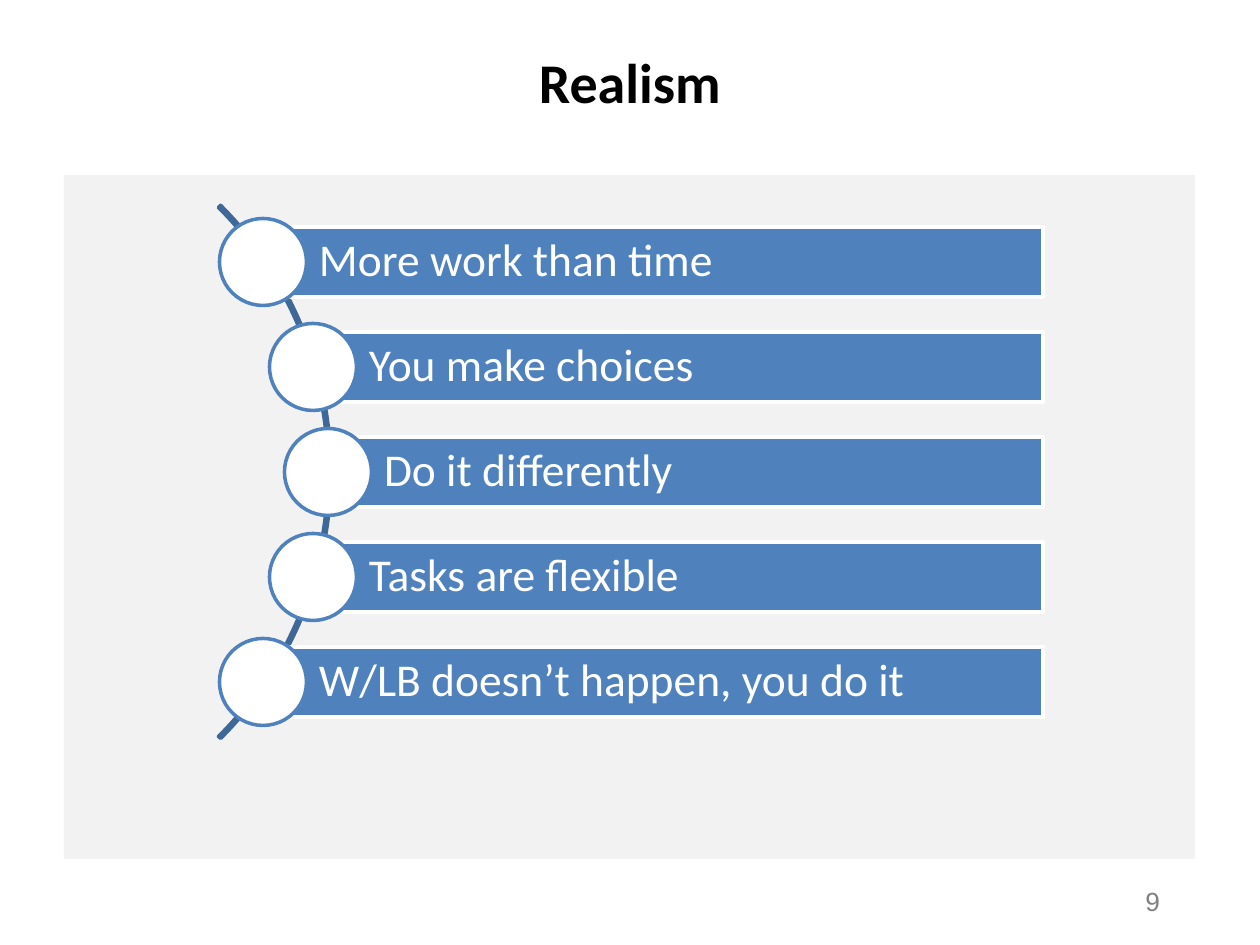
import math
from dataclasses import dataclass

from pptx import Presentation
from pptx import util as u
from pptx.dml.color import RGBColor
from pptx.enum import shapes, text

EMU_PER_PX = 914400 / 126
SLIDE_WIDTH, SLIDE_HEIGHT = 1260, 945

POINTS = [
    "More work than time",
    "You make choices",
    "Do it differently",
    "Tasks are flexible",
    "W/LB doesn’t happen, you do it",
]
ARC_CENTRE_X, ARC_CENTRE_Y = -46, 472
ARC_RADIUS, MARKER_TRACK = 377, 374
ROW_PITCH = 105
BAR_RIGHT, BAR_HEIGHT = 1043, 70
MARKER_SIZE = 87


@dataclass(frozen=True)
class Theme:
    panel: str = "F2F2F2"
    bar: str = "4F81BD"
    arc: str = "3F6797"
    white: str = "FFFFFF"
    title: str = "000000"
    number: str = "808080"
    heading_font: str = "Calibri"
    number_font: str = "Arial"
    title_size: int = 32
    point_size: int = 26
    number_size: int = 15
    line_width: int = 2


THEME = Theme()


def px(length):
    return u.Emu(round(length * EMU_PER_PX))


def box(left, top, width, height):
    return px(left), px(top), px(width), px(height)


def add_figure(slide, kind, bounds, fill=None, line=None):
    figure = slide.shapes.add_shape(kind, *box(*bounds))
    figure.shadow.inherit = False
    if fill:
        figure.fill.solid()
        figure.fill.fore_color.rgb = RGBColor.from_string(fill)
    else:
        figure.fill.background()
    if line:
        figure.line.color.rgb = RGBColor.from_string(line)
        figure.line.width = u.Pt(THEME.line_width)
    else:
        figure.line.fill.background()
    return figure


def write(frame, wording, font, size, color, align, bold=False):
    frame.text = wording
    paragraph = frame.paragraphs[0]
    paragraph.alignment = align
    style = paragraph.runs[0].font
    style.name, style.size, style.bold = font, u.Pt(size), bold
    style.color.rgb = RGBColor.from_string(color)
    return paragraph


def add_title(slide, wording):
    frame = slide.shapes.add_textbox(*box(63, 38, 1134, 87)).text_frame
    frame.word_wrap = True
    frame.vertical_anchor = text.MSO_ANCHOR.MIDDLE
    write(frame, wording, THEME.heading_font, THEME.title_size, THEME.title,
          text.PP_ALIGN.CENTER, bold=True)


def add_slide_number(slide, number):
    frame = slide.shapes.add_textbox(*box(1133, 879, 58, 44)).text_frame
    frame.word_wrap = False
    write(frame, number, THEME.number_font, THEME.number_size, THEME.number,
          text.PP_ALIGN.LEFT)


def add_arc(slide):
    """Draw the thin arc from 315 to 45 degrees behind the markers."""
    bounds = (ARC_CENTRE_X - ARC_RADIUS, ARC_CENTRE_Y - ARC_RADIUS,
              2 * ARC_RADIUS, 2 * ARC_RADIUS)
    arc = add_figure(slide, shapes.MSO_SHAPE.BLOCK_ARC, bounds, line=THEME.arc)
    for index, value in enumerate((189, 27, 0.004)):
        arc.adjustments[index] = value


def add_point(slide, wording, offset):
    """Place a bar and its marker at a vertical offset from the arc's centre."""
    centre_x = ARC_CENTRE_X + round(math.sqrt(MARKER_TRACK**2 - offset**2))
    centre_y = ARC_CENTRE_Y + offset

    bar = add_figure(
        slide, shapes.MSO_SHAPE.RECTANGLE,
        (centre_x, centre_y - BAR_HEIGHT / 2, BAR_RIGHT - centre_x, BAR_HEIGHT),
        THEME.bar, THEME.white)
    frame = bar.text_frame
    frame.word_wrap = True
    frame.vertical_anchor = text.MSO_ANCHOR.MIDDLE
    frame.margin_left = px(56)
    frame.margin_top = frame.margin_right = frame.margin_bottom = px(9)
    paragraph = write(frame, wording, THEME.heading_font, THEME.point_size,
                      THEME.white, text.PP_ALIGN.LEFT)
    paragraph.line_spacing = 0.9

    add_figure(
        slide, shapes.MSO_SHAPE.OVAL,
        (centre_x - MARKER_SIZE / 2, centre_y - MARKER_SIZE / 2,
         MARKER_SIZE, MARKER_SIZE),
        THEME.white, THEME.bar)


def main():
    deck = Presentation()
    deck.slide_width, deck.slide_height = px(SLIDE_WIDTH), px(SLIDE_HEIGHT)
    slide = deck.slides.add_slide(deck.slide_layouts[6])

    add_figure(slide, shapes.MSO_SHAPE.RECTANGLE, (64, 175, 1131, 684), THEME.panel)
    add_slide_number(slide, "9")
    add_title(slide, "Realism")
    add_arc(slide)
    middle = len(POINTS) // 2
    for row, wording in enumerate(POINTS):
        add_point(slide, wording, (row - middle) * ROW_PITCH)

    deck.save("out.pptx")


if __name__ == "__main__":
    main()
